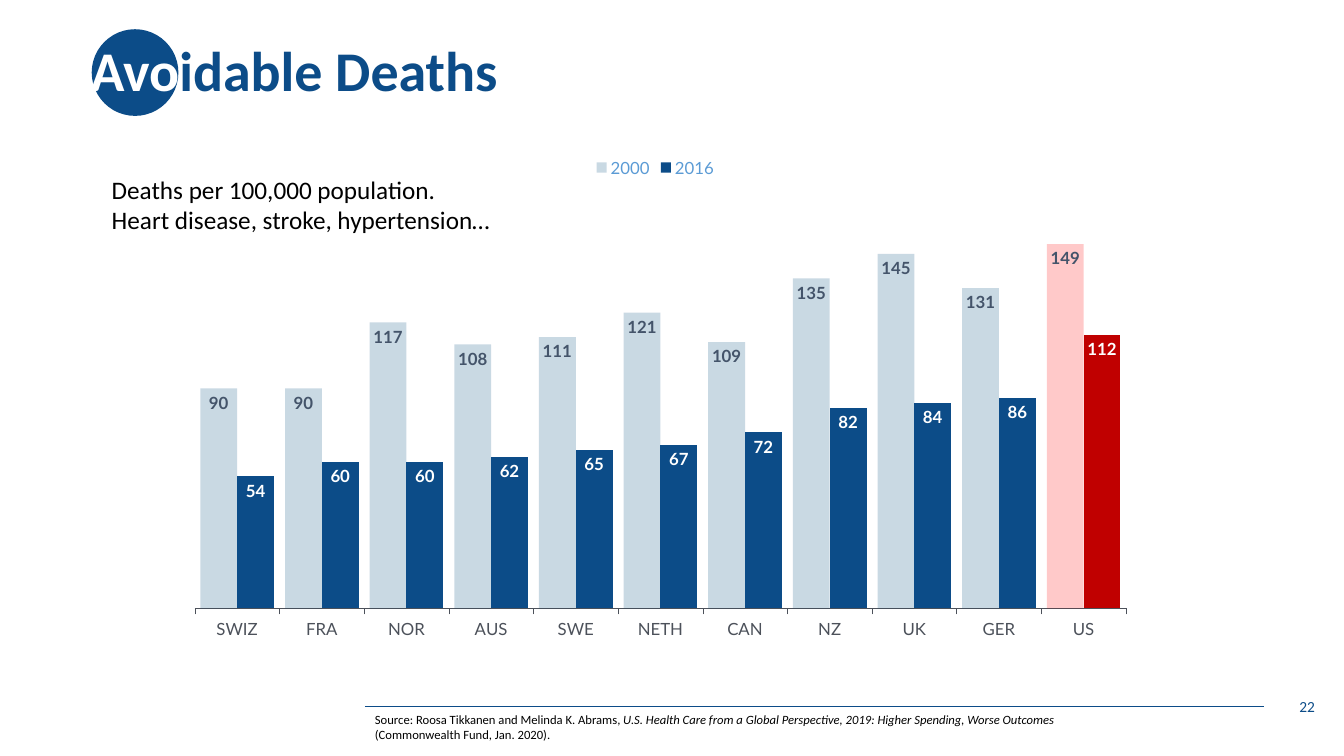
from dataclasses import dataclass

from lxml import etree
from pptx import Presentation
from pptx.chart.data import CategoryChartData
from pptx.dml.color import RGBColor
from pptx.enum import chart as ch, shapes, text
from pptx.oxml.ns import qn
from pptx.util import Inches, Pt


@dataclass(frozen=True)
class Theme:
    navy: str = "0C4C88"
    steel: str = "044C7F"
    red: str = "FF0000"
    dark_red: str = "C00000"
    slate: str = "44546A"
    grey: str = "4C515A"
    sky: str = "5B9BD5"
    white: str = "FFFFFF"
    black: str = "000000"
    text_font: str = "Calibri"
    chart_font: str = "Lato"
    title_size: int = 40
    caption_size: int = 18
    chart_size: int = 12
    number_size: int = 11
    source_size: int = 9


@dataclass(frozen=True)
class Run:
    words: str
    color: str
    italic: bool = False


@dataclass(frozen=True)
class Year:
    name: str
    deaths: tuple[int, ...]
    color: str
    us_color: str
    label_color: str
    opacity: int = 100


THEME = Theme()
COUNTRIES = ("SWIZ", "FRA", "NOR", "AUS", "SWE", "NETH", "CAN", "NZ", "UK", "GER", "US")
YEARS = (
    Year("2000", (90, 90, 117, 108, 111, 121, 109, 135, 145, 131, 149),
         THEME.steel, THEME.red, THEME.slate, opacity=21),
    Year("2016", (54, 60, 60, 62, 65, 67, 72, 82, 84, 86, 112),
         THEME.navy, THEME.dark_red, THEME.white),
)
PLOT_AREA = {"x": 0.011, "y": 0.137, "w": 0.989, "h": 0.752}


def rgb(color: str) -> RGBColor:
    return RGBColor.from_string(color)


def set_font(font, size: int, color: str, name: str, bold: bool = False) -> None:
    font.size, font.name, font.bold = Pt(size), name, bold
    font.color.rgb = rgb(color)


def write(frame, paragraphs, *, size: int, bold: bool = False, wrap: bool = True,
          align=text.PP_ALIGN.LEFT, anchor=text.MSO_ANCHOR.TOP, spacing: float = 1.0) -> None:
    """Fill a text frame with paragraphs, each a sequence of Run."""
    frame.word_wrap = wrap
    frame.vertical_anchor = anchor
    for index, runs in enumerate(paragraphs):
        paragraph = frame.add_paragraph() if index else frame.paragraphs[0]
        paragraph.alignment, paragraph.line_spacing = align, spacing
        for part in runs:
            run = paragraph.add_run()
            run.text = part.words
            set_font(run.font, size, part.color, THEME.text_font, bold)
            run.font.italic = part.italic


def add_text(slide, left: float, top: float, width: float, height: float, paragraphs, **style):
    box = slide.shapes.add_textbox(*map(Inches, (left, top, width, height)))
    write(box.text_frame, paragraphs, **style)
    return box


def add_title(slide) -> None:
    circle = slide.shapes.add_shape(
        shapes.MSO_SHAPE.OVAL, *map(Inches, (0.91, 0.29, 0.86, 0.86)))
    circle.shadow.inherit = False
    circle.fill.solid()
    circle.fill.fore_color.rgb = rgb(THEME.navy)
    circle.line.fill.background()

    title = slide.shapes.title
    title.left, title.top, title.width, title.height = map(Inches, (0.8, 0, 11.5, 1.45))
    write(title.text_frame, [[Run("Avo", THEME.white), Run("idable Deaths", THEME.navy)]],
          size=THEME.title_size, bold=True, anchor=text.MSO_ANCHOR.MIDDLE, spacing=0.9)
    circle._element.addnext(title._element)  # the title lies over the circle


def add_source_rule(slide) -> None:
    rule = slide.shapes.add_connector(
        shapes.MSO_CONNECTOR.STRAIGHT, *map(Inches, (3.62, 7.01, 12.54, 7.01)))
    rule.line.color.rgb = rgb(THEME.navy)
    rule.line.width = Pt(0.5)
    etree.SubElement(rule._element.spPr, qn("a:effectLst"))


def fill_bar(bar, color: str, opacity: int) -> None:
    bar.format.fill.solid()
    bar.format.fill.fore_color.rgb = rgb(color)
    if opacity < 100:
        for srgb in bar.format.fill._xPr.iter(qn("a:srgbClr")):
            etree.SubElement(srgb, qn("a:alpha"), val=str(opacity * 1000))


def style_series(series, year: Year) -> None:
    series.invert_if_negative = False
    fill_bar(series, year.color, year.opacity)
    fill_bar(series.points[COUNTRIES.index("US")], year.us_color, year.opacity)
    labels = series.data_labels
    labels.show_value = True
    labels.position = ch.XL_LABEL_POSITION.INSIDE_END
    labels.number_format, labels.number_format_is_linked = "#,##0", False
    set_font(labels.font, THEME.chart_size, year.label_color, THEME.chart_font, bold=True)


def place_plot(chart) -> None:
    """Give the inner plot area its fixed share of the chart."""
    plot_area = chart._chartSpace.chart.plotArea
    for old in plot_area.findall(qn("c:layout")):
        plot_area.remove(old)
    layout = etree.Element(qn("c:layout"))
    plot_area.insert(0, layout)
    manual = etree.SubElement(layout, qn("c:manualLayout"))
    settings = {"layoutTarget": "inner", "xMode": "edge", "yMode": "edge", **PLOT_AREA}
    for key, value in settings.items():
        etree.SubElement(manual, qn(f"c:{key}"), val=str(value))


def add_deaths_chart(slide) -> None:
    data = CategoryChartData()
    data.categories = COUNTRIES
    for year in YEARS:
        data.add_series(year.name, year.deaths)
    chart = slide.shapes.add_chart(
        ch.XL_CHART_TYPE.COLUMN_CLUSTERED, *map(Inches, (1.83, 1.45, 9.34, 5.16)), data).chart
    set_font(chart.font, THEME.chart_size, THEME.sky, THEME.chart_font)
    chart.has_title = False
    chart.has_legend = True
    chart.legend.position = ch.XL_LEGEND_POSITION.TOP
    chart.legend.include_in_layout = False
    set_font(chart.legend.font, THEME.chart_size, THEME.sky, THEME.chart_font)

    countries, deaths = chart.category_axis, chart.value_axis
    countries.major_tick_mark = ch.XL_TICK_MARK.OUTSIDE
    countries.format.line.color.rgb = rgb(THEME.grey)
    countries.format.line.width = Pt(0.3)
    set_font(countries.tick_labels.font, THEME.chart_size, THEME.grey, THEME.chart_font)
    deaths.minimum_scale, deaths.maximum_scale = 0, 160
    deaths.has_major_gridlines = False
    deaths.visible = False

    plot = chart.plots[0]
    plot.vary_by_categories = False
    plot.gap_width, plot.overlap = 30, 0
    for series, year in zip(plot.series, YEARS):
        style_series(series, year)
    place_plot(chart)


def main() -> None:
    deck = Presentation()
    deck.slide_width, deck.slide_height = Inches(13.33), Inches(7.5)
    slide = deck.slides.add_slide(deck.slide_layouts.get_by_name("Title Only"))

    add_source_rule(slide)
    add_title(slide)
    add_text(slide, 10.14, 6.81, 3, 0.4, [[Run("22", THEME.navy)]], size=THEME.number_size,
             align=text.PP_ALIGN.RIGHT, anchor=text.MSO_ANCHOR.MIDDLE)
    add_deaths_chart(slide)
    add_text(slide, 3.62, 7.01, 7.55, 0.4, [[
        Run("Source: Roosa Tikkanen and Melinda K. Abrams, ", THEME.black),
        Run("U.S. Health Care from a Global Perspective, 2019: Higher Spending, Worse Outcomes ",
            THEME.black, italic=True),
        Run("(Commonwealth Fund, Jan. 2020).", THEME.black),
    ]], size=THEME.source_size)
    add_text(slide, 1.01, 1.68, 4.01, 0.71, [
        [Run("Deaths per 100,000 population.", THEME.black)],
        [Run("Heart disease, stroke, hypertension…", THEME.black)],
    ], size=THEME.caption_size, wrap=False)
    deck.save("out.pptx")


if __name__ == "__main__":
    main()
